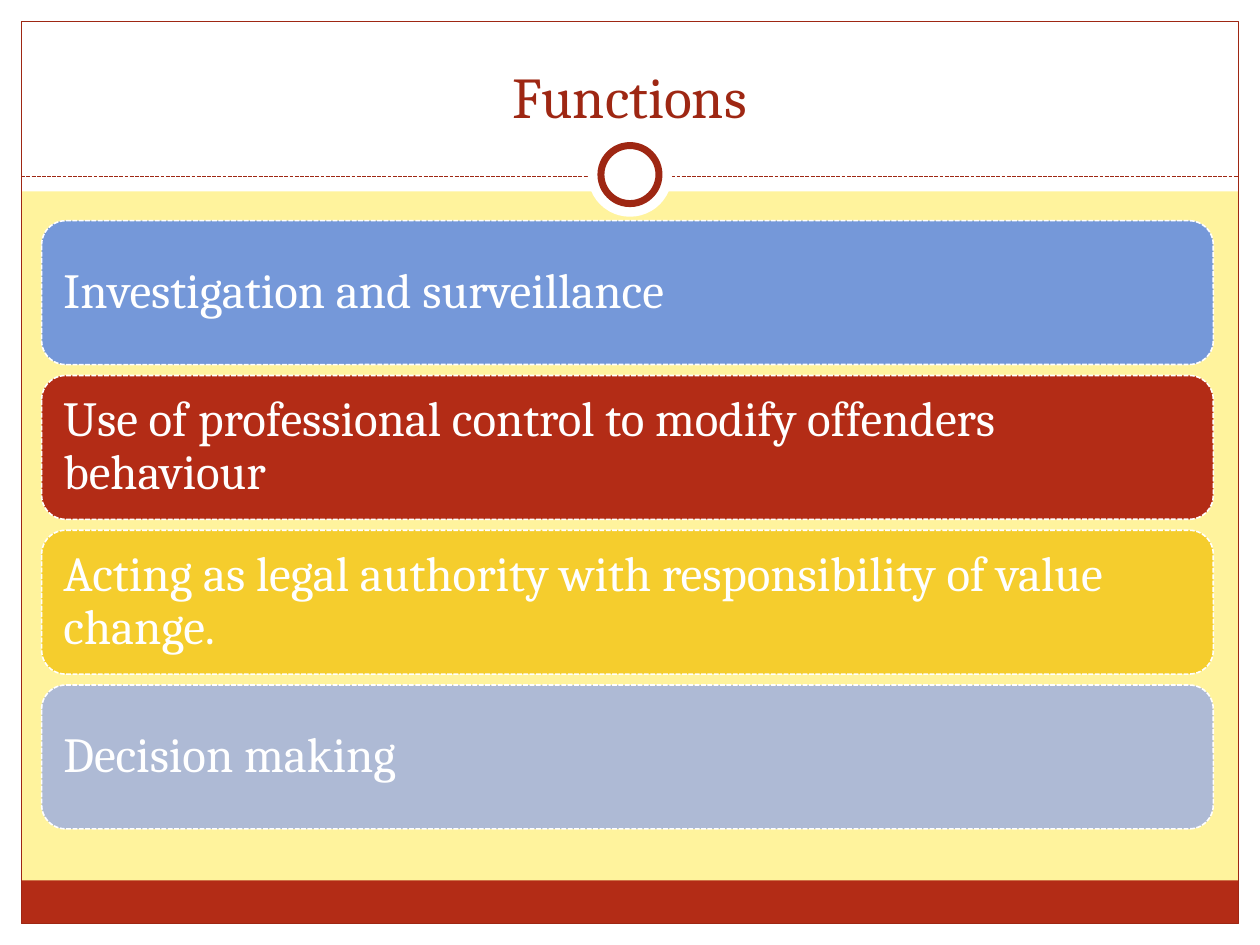
from dataclasses import dataclass

from lxml.etree import SubElement
from pptx import Presentation
from pptx.dml.color import RGBColor as RGB
from pptx.enum.dml import MSO_LINE as Dash
from pptx.enum.shapes import MSO_CONNECTOR as Conn, MSO_SHAPE as Shape
from pptx.enum.text import MSO_ANCHOR as Anchor, PP_ALIGN as Align
from pptx.oxml.ns import qn
from pptx.util import Cm, Pt


@dataclass(frozen=True)
class Theme:
    font: str = "Cambria"
    paper: str = "FFF39D"
    white: str = "FFFFFF"
    brick: str = "B32C16"
    dark: str = "9E2713"
    blue: str = "7598D9"
    yellow: str = "F5CD2D"
    lavender: str = "AEBAD5"
    title_size: int = 33
    card_size: int = 28


WIDTH, HEIGHT = 25.4, 19.05
MARGIN = 0.43
HEADER_HEIGHT = 3.86
RULE_Y, RING_Y = 3.56, 3.52
CARD_LEFT, CARD_TOP, CARD_WIDTH, CARD_HEIGHT = 0.84, 4.45, 23.62, 2.9
CARD_STEP = 3.12


def apply(target, values):
    for name, value in values.items():
        setattr(target, name, value)


class SlideBuilder:
    def __init__(self, slide, theme):
        self.s, self.theme = slide, theme

    def background(self, color):
        fill = self.s.background.fill
        fill.solid()
        fill.fore_color.rgb = RGB.from_string(color)

    def outline(self, line, color, width, dash=None):
        line.color.rgb = RGB.from_string(color)
        apply(line, {"width": Pt(width), "dash_style": dash})

    def shape(self, kind, box, fill=None, line=None):
        """Draw a preset shape; line is (color, width[, dash])."""
        sp = self.s.shapes.add_shape(kind, *map(Cm, box))
        sp.shadow.inherit = False
        if fill:
            sp.fill.solid()
            sp.fill.fore_color.rgb = RGB.from_string(fill)
        else:
            sp.fill.background()
        if line:
            self.outline(sp.line, *line)
        else:
            sp.line.fill.background()
        return sp

    def circle(self, center_y, size, line=None):
        box = ((WIDTH - size) / 2, center_y - size / 2, size, size)
        self.shape(Shape.OVAL, box, self.theme.white, line)

    def rule(self, y):
        cx = self.s.shapes.add_connector(
            Conn.STRAIGHT, Cm(MARGIN), Cm(y), Cm(WIDTH - MARGIN), Cm(y))
        self.outline(cx.line, self.theme.dark, 0.75, Dash.SQUARE_DOT)
        SubElement(cx._element.spPr, qn("a:effectLst"))

    def text(self, sp, text, size, color, frame, paragraph):
        tf = sp.text_frame
        apply(tf, {"word_wrap": True, **frame})
        p = tf.paragraphs[0]
        apply(p, paragraph)
        r = p.add_run()
        r.text = text
        apply(r.font, {"name": self.theme.font, "size": Pt(size)})
        r.font.color.rgb = RGB.from_string(color)

    def title(self, text, box):
        sp = self.s.shapes.add_textbox(*map(Cm, box))
        self.text(sp, text, self.theme.title_size, self.theme.dark,
                  {"vertical_anchor": Anchor.BOTTOM}, {"alignment": Align.CENTER})

    def card(self, text, top, fill):
        t = self.theme
        sp = self.shape(Shape.ROUNDED_RECTANGLE, (CARD_LEFT, top, CARD_WIDTH, CARD_HEIGHT),
                        fill, (t.white, 0.9, Dash.SQUARE_DOT))
        sides = ("left", "top", "right", "bottom")
        frame = {f"margin_{side}": Cm(0.3) for side in sides}
        self.text(sp, text, t.card_size, t.white,
                  {"vertical_anchor": Anchor.MIDDLE, **frame},
                  {"alignment": Align.LEFT, "line_spacing": 0.9})


def main():
    prs = Presentation()
    apply(prs, {"slide_width": Cm(WIDTH), "slide_height": Cm(HEIGHT)})
    t = Theme()
    b = SlideBuilder(prs.slides.add_slide(prs.slide_layouts[6]), t)

    b.background(t.paper)
    for box in (
        (0, HEIGHT - MARGIN, WIDTH, MARGIN),
        (0, 0, WIDTH, HEADER_HEIGHT),
        (0, 0, MARGIN, HEIGHT),
        (WIDTH - MARGIN, 0, MARGIN, HEIGHT),
    ):
        b.shape(Shape.RECTANGLE, box, t.white)
    inner_width = WIDTH - 2 * MARGIN
    b.shape(Shape.RECTANGLE, (MARGIN, 17.75, inner_width, 0.87), t.brick)
    b.shape(Shape.RECTANGLE, (MARGIN, MARGIN, inner_width, HEIGHT - 2 * MARGIN),
            line=(t.dark, 0.75))
    b.rule(RULE_Y)
    b.circle(RING_Y, 1.7)
    b.circle(RING_Y, 1.17, (t.dark, 4))
    b.title("Functions", (0.85, 0.64, 23.7, 2.11))

    cards = (
        ("Investigation and surveillance", t.blue),
        ("Use of professional control to modify offenders behaviour", t.brick),
        ("Acting as legal authority with responsibility of value change.", t.yellow),
        ("Decision making", t.lavender),
    )
    for i, (text, fill) in enumerate(cards):
        b.card(text, CARD_TOP + i * CARD_STEP, fill)

    prs.save("out.pptx")


if __name__ == "__main__":
    main()
